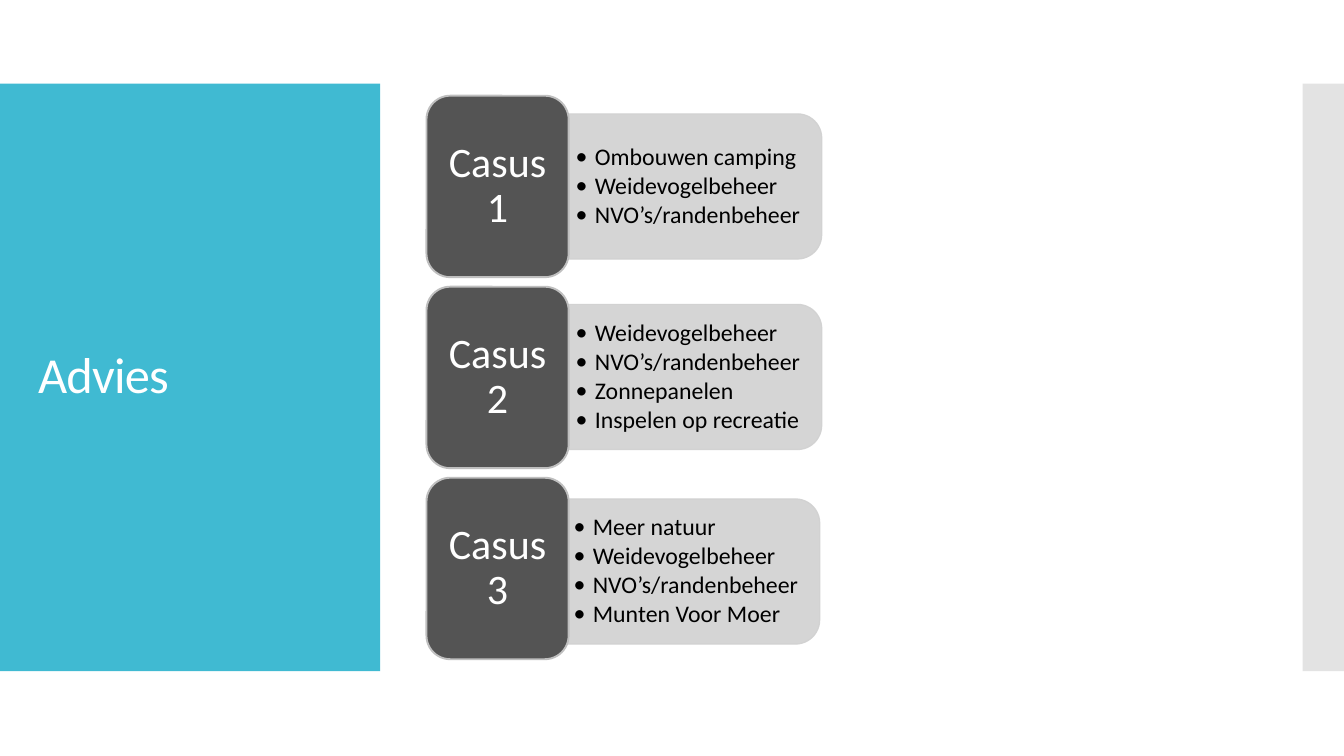
from dataclasses import dataclass
from lxml.etree import SubElement
from pptx import Presentation
from pptx.dml.color import RGBColor
from pptx.enum.shapes import MSO_SHAPE
from pptx.enum.text import MSO_ANCHOR, PP_ALIGN
from pptx.oxml.ns import qn
from pptx.util import Inches, Pt


@dataclass
class Theme:
    font: str = "Calibri"
    teal: str = "40BAD2"
    strip: str = "C8C8C8"
    panel: str = "D1D1D1"
    dark: str = "545454"
    edge: str = "BFBFBF"
    white: str = "FFFFFF"
    black: str = "000000"
    title: float = 36
    label: float = 30
    item: float = 17


theme = Theme()


def add_box(kind, left, top, width, height, color, alpha=100, edge=None, weight=0):
    """Add a filled shape; alpha in percent holds for both fill and line."""
    box = slide.shapes.add_shape(
        kind, Inches(left), Inches(top), Inches(width), Inches(height))
    box.shadow.inherit = False
    box.fill.solid()
    box.fill.fore_color.rgb = RGBColor.from_string(color)
    if edge:
        box.line.color.rgb = RGBColor.from_string(edge)
        box.line.width = Pt(weight)
    else:
        box.line.fill.background()
    if alpha < 100:
        for tint in box._element.spPr.iter(qn("a:srgbClr")):
            SubElement(tint, qn("a:alpha"), val=str(alpha * 1000))
    return box


def set_text(shape, lines, size, color, align, inset):
    """Write one paragraph per line, centred vertically."""
    frame = shape.text_frame
    frame.word_wrap = True
    frame.vertical_anchor = MSO_ANCHOR.MIDDLE
    frame.margin_left = frame.margin_right = Inches(inset[0])
    frame.margin_top = frame.margin_bottom = Inches(inset[1])
    frame.text = "\n".join(lines)
    for para in frame.paragraphs:
        para.alignment = align
        para.line_spacing = 0.9
        para.font.name = theme.font
        para.font.size = Pt(size)
        para.font.color.rgb = RGBColor.from_string(color)
    return frame.paragraphs


deck = Presentation()
deck.slide_width, deck.slide_height = Inches(13.33), Inches(7.5)
slide = deck.slides.add_slide(deck.slide_layouts[6])

# Side bands
add_box(MSO_SHAPE.RECTANGLE, 0, 0.83, 3.77, 5.83, theme.teal)
add_box(MSO_SHAPE.RECTANGLE, 12.92, 0.83, 0.41, 5.83, theme.strip, alpha=50)

# Title
title = slide.shapes.add_textbox(Inches(0.28), Inches(1.23), Inches(3.22), Inches(5.03))
head = set_text(title, ["Advies"], theme.title, theme.white, PP_ALIGN.LEFT, (0.1, 0.05))
head[0].runs[0].font._element.set("spc", "-60")

# Cases: left and top of the panel, then its items
cases = [
    (5.64, 1.13, ["Ombouwen camping", "Weidevogelbeheer", "NVO’s/randenbeheer"]),
    (5.64, 3.02, ["Weidevogelbeheer", "NVO’s/randenbeheer", "Zonnepanelen",
                  "Inspelen op recreatie"]),
    (5.62, 4.95, ["Meer natuur", "Weidevogelbeheer", "NVO’s/randenbeheer",
                  "Munten Voor Moer"]),
]
long, short = 2.51, 1.44
for row, (left, top, items) in enumerate(cases):
    # Panel, turned so that its round corners face right
    shift = (long - short) / 2
    panel = add_box(MSO_SHAPE.ROUND_2_SAME_RECTANGLE, left + shift, top - shift,
                    short, long, theme.panel, 90, theme.panel, 0.85)
    panel.rotation = 90

    # Bullet list
    note = slide.shapes.add_textbox(
        Inches(left), Inches(top + 0.07), Inches(2.44), Inches(1.3))
    for para in set_text(note, items, theme.item, theme.black, PP_ALIGN.LEFT, (0.07, 0.04)):
        para.space_after = Pt(2.3)
        props = para._p.get_or_add_pPr()
        props.set("marL", str(Inches(0.19)))
        props.set("indent", str(Inches(-0.19)))
        base = props.find(qn("a:defRPr"))
        base.addprevious(SubElement(props, qn("a:buFont"), typeface=theme.font))
        base.addprevious(SubElement(props, qn("a:buChar"), char="•"))

    # Case label
    label = add_box(MSO_SHAPE.ROUNDED_RECTANGLE, 4.23, 0.95 + row * 1.895, 1.41, 1.8,
                    theme.dark, edge=theme.edge, weight=1.35)
    set_text(label, [f"Casus {row + 1}"], theme.label, theme.white,
             PP_ALIGN.CENTER, (0.12, 0.06))

deck.save("out.pptx")
